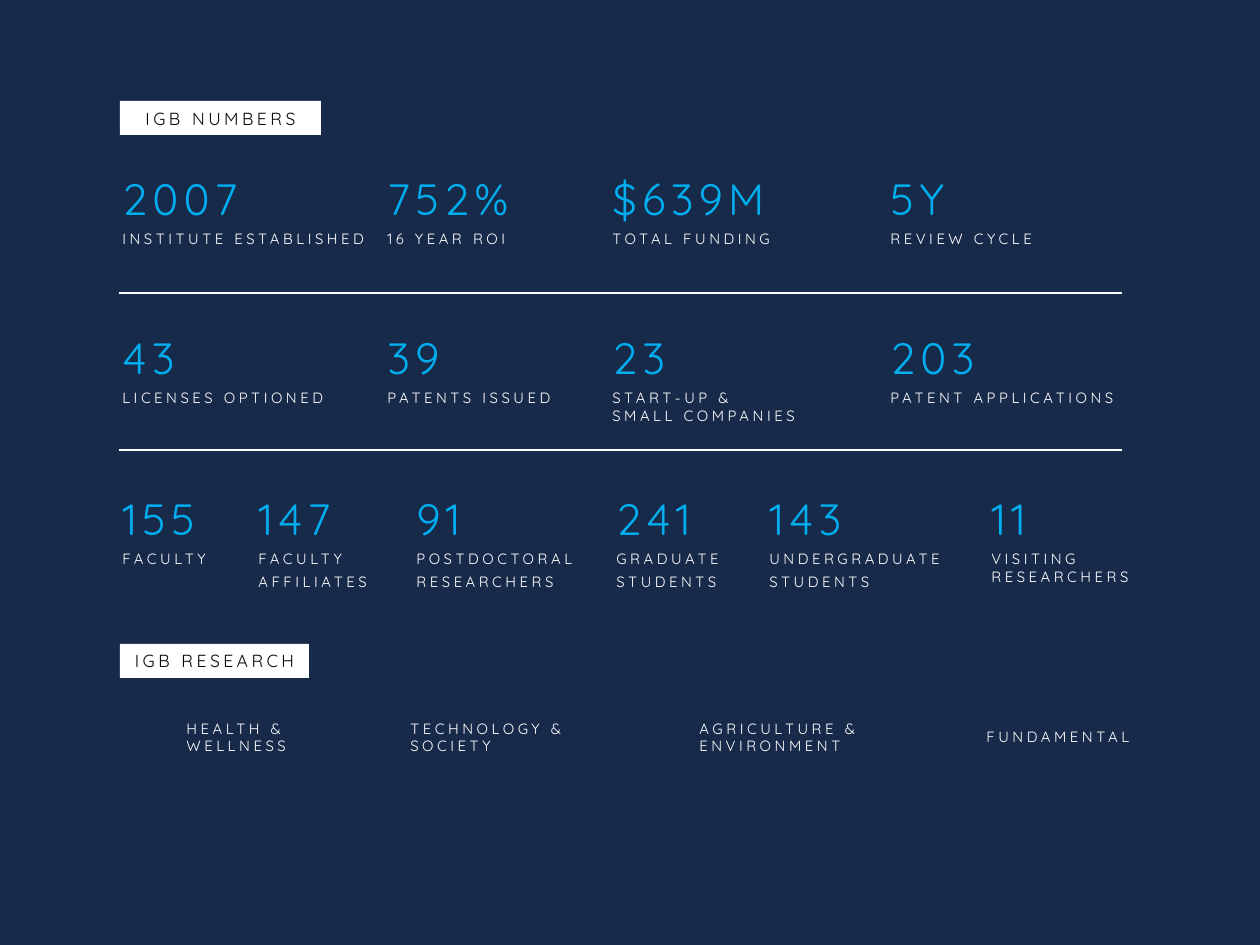
"""Build the slide of institute numbers and research themes."""
from copy import deepcopy
from typing import NamedTuple

from pptx import Presentation, util as u
from pptx.dml.color import RGBColor
from pptx.enum import shapes, text
from pptx.oxml import parse_xml
from pptx.oxml.ns import nsdecls, qn

EMU_PER_PX = 914400 / 126
WIDTH, HEIGHT = 1260, 945
FONT = "Quicksand"
NAVY, BLACK, WHITE, CYAN = "182A4A", "0B0A09", "FFFFFF", "00AEEF"


class Box(NamedTuple):
    left: int
    top: int
    width: int
    height: int


class Style(NamedTuple):
    size: float
    color: str
    spacing: int


class Stat(NamedTuple):
    left: int
    width: int
    height: int
    number: str
    labels: tuple[str, ...]


class Label(NamedTuple):
    box: Box
    wording: str


NUMBER = Style(25, CYAN, 300)
CAPTION = Style(8.5, WHITE, 200)
HEADING = Style(10, BLACK, 200)

STAT_ROWS = {
    166: (
        Stat(110, 295, 91, "2007", ("INSTITUTE ESTABLISHED",)),
        Stat(375, 295, 91, "752%", ("16 YEAR ROI",)),
        Stat(600, 295, 91, "$639M", ("TOTAL FUNDING",)),
        Stat(878, 295, 91, "5Y", ("REVIEW CYCLE",)),
    ),
    325: (
        Stat(110, 267, 91, "43", ("LICENSES OPTIONED",)),
        Stat(375, 224, 91, "39", ("PATENTS ISSUED",)),
        Stat(600, 278, 107, "23", ("START-UP &\vSMALL COMPANIES",)),
        Stat(878, 295, 91, "203", ("PATENT APPLICATIONS",)),
    ),
    486: (
        Stat(110, 140, 91, "155", ("FACULTY",)),
        Stat(246, 155, 115, "147", ("FACULTY", "AFFILIATES")),
        Stat(404, 185, 115, "91", ("POSTDOCTORAL", "RESEARCHERS")),
        Stat(604, 149, 115, "241", ("GRADUATE", "STUDENTS")),
        Stat(757, 203, 115, "143", ("UNDERGRADUATE", "STUDENTS")),
        Stat(979, 164, 107, "11", ("VISITING\vRESEARCHERS",)),
    ),
}
HEADINGS = (
    Label(Box(120, 101, 201, 34), "IGB NUMBERS"),
    Label(Box(120, 644, 189, 34), "IGB RESEARCH"),
)
THEMES = (
    Label(Box(174, 713, 185, 49), "HEALTH & WELLNESS"),
    Label(Box(398, 713, 185, 49), "TECHNOLOGY & SOCIETY"),
    Label(Box(687, 713, 185, 49), "AGRICULTURE & ENVIRONMENT"),
    Label(Box(974, 721, 185, 32), "FUNDAMENTAL"),
)
RULE_LEFT, RULE_RIGHT, RULE_TOPS = 119, 1122, (293, 450)


def px(length: int) -> int:
    return round(length * EMU_PER_PX)


def rgb(color: str) -> RGBColor:
    return RGBColor.from_string(color)


def assign(target, **values) -> None:
    for name, value in values.items():
        setattr(target, name, value)


def write(paragraph, wording: str, style: Style, **layout) -> None:
    paragraph.text = wording
    assign(paragraph, **layout)
    for run in paragraph.runs:
        assign(run.font, name=FONT, size=u.Pt(style.size))
        run.font.color.rgb = rgb(style.color)
        run._r.get_or_add_rPr().set("spc", str(style.spacing))
    for line_break in paragraph._p.findall(qn("a:br")):
        line_break.append(deepcopy(paragraph.runs[0]._r.rPr))


def add_block(slide, box: Box, lines: list[tuple[str, Style]]) -> None:
    frame = slide.shapes.add_textbox(*map(px, box)).text_frame
    assign(frame, word_wrap=True, auto_size=text.MSO_AUTO_SIZE.SHAPE_TO_FIT_TEXT)
    for index, (wording, style) in enumerate(lines):
        paragraph = frame.add_paragraph() if index else frame.paragraphs[0]
        write(paragraph, wording, style, space_after=u.Pt(3))


def add_rectangle(slide, box: Box, color: str):
    shape = slide.shapes.add_shape(shapes.MSO_SHAPE.RECTANGLE, *map(px, box))
    shape.shadow.inherit = False
    shape.fill.solid()
    shape.fill.fore_color.rgb = rgb(color)
    shape.line.fill.background()
    return shape


def add_heading(slide, heading: Label) -> None:
    frame = add_rectangle(slide, heading.box, WHITE).text_frame
    assign(frame, word_wrap=True, vertical_anchor=text.MSO_ANCHOR.MIDDLE,
           auto_size=text.MSO_AUTO_SIZE.SHAPE_TO_FIT_TEXT)
    write(frame.paragraphs[0], heading.wording, HEADING, alignment=text.PP_ALIGN.CENTER)


def add_rule(slide, top: int) -> None:
    ends = map(px, (RULE_LEFT, top, RULE_RIGHT, top))
    rule = slide.shapes.add_connector(shapes.MSO_CONNECTOR.STRAIGHT, *ends)
    rule.line.color.rgb = rgb(WHITE)
    rule.line.width = u.Pt(1)
    rule._element.spPr.append(parse_xml(f"<a:effectLst {nsdecls('a')}/>"))


def main() -> None:
    presentation = Presentation()
    assign(presentation, slide_width=px(WIDTH), slide_height=px(HEIGHT))
    slide = presentation.slides.add_slide(presentation.slide_layouts[6])
    slide.background.fill.solid()
    slide.background.fill.fore_color.rgb = rgb(BLACK)
    add_rectangle(slide, Box(0, 0, WIDTH, HEIGHT), NAVY)
    for heading in HEADINGS:
        add_heading(slide, heading)
    for theme in THEMES:
        add_block(slide, theme.box, [(theme.wording, CAPTION)])
    for top, stats in STAT_ROWS.items():
        for stat in stats:
            captions = [(label, CAPTION) for label in stat.labels]
            add_block(slide, Box(stat.left, top, stat.width, stat.height),
                      [(stat.number, NUMBER), *captions])
    for top in RULE_TOPS:
        add_rule(slide, top)
    presentation.save("out.pptx")


if __name__ == "__main__":
    main()
